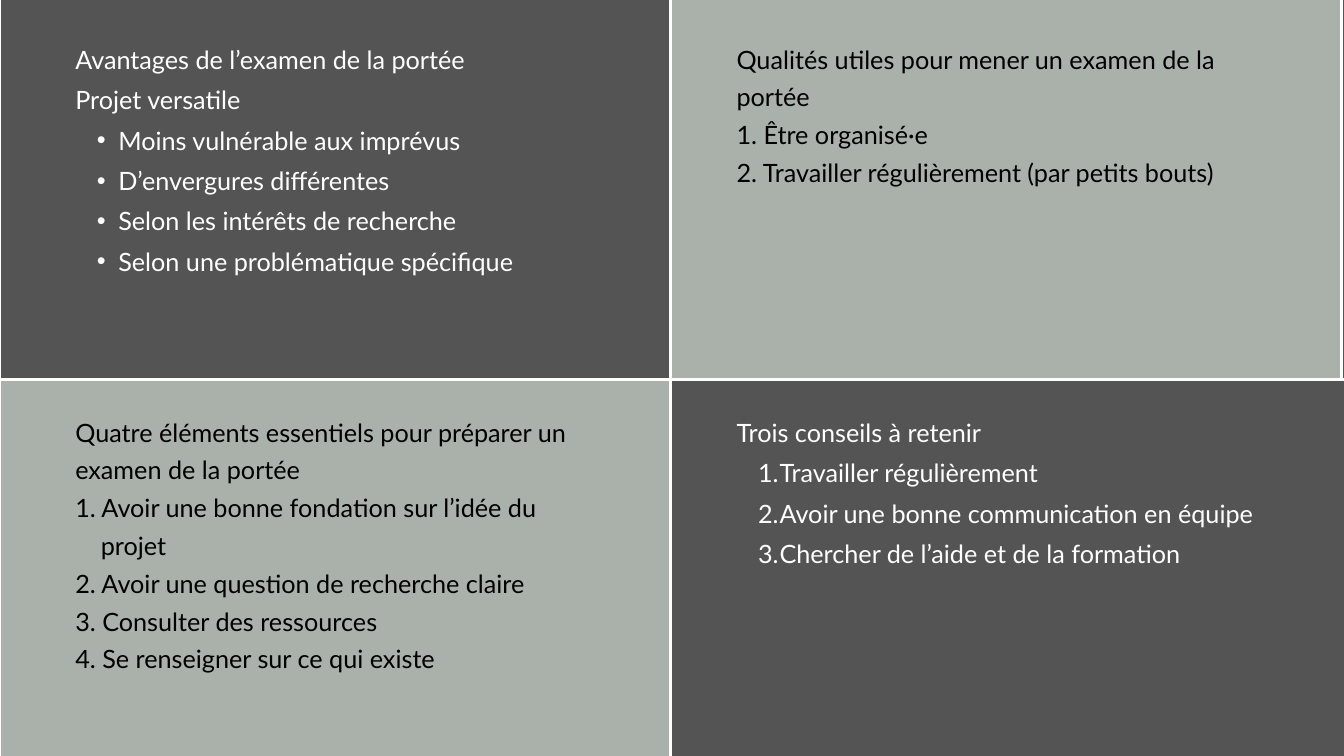
from lxml import etree
from pptx import Presentation
from pptx.dml.color import RGBColor
from pptx.enum.shapes import MSO_CONNECTOR, MSO_SHAPE
from pptx.enum.text import MSO_ANCHOR, MSO_AUTO_SIZE, PP_ALIGN
from pptx.oxml.ns import qn
from pptx.util import Inches, Pt

STRAIGHT = MSO_CONNECTOR.STRAIGHT
RECTANGLE = MSO_SHAPE.RECTANGLE
TOP = MSO_ANCHOR.TOP
NO_FIT = MSO_AUTO_SIZE.NONE
LEFT = PP_ALIGN.LEFT

WIDTH, HEIGHT = 20, 11.25
COL, ROW, BLEED = 9.98, 5.75, 0.1
DARK, LIGHT, WHITE, BLACK = "545454", "AAB1AB", "FFFFFF", "000000"
FONT, SIZE, RULE = "Lato", 27, 3

# Paragraph kind: (level, left margin, first-line indent, bullet tag, attributes)
KINDS = {
    "plain": (0, 0, 0, "a:buNone", {}),
    "hang": (0, 0.38, 0, "a:buNone", {}),
    "bullet": (1, 0.64, -0.32, "a:buChar", {"char": "•"}),
    "number": (1, 0.64, -0.32, "a:buAutoNum", {"type": "arabicPeriod"}),
}

# Quadrant: (column, row, text box offset and size, paragraphs)
QUADRANTS = [
    (0, 0, (1.12, 0.61, 8.02, 4.13), [
        ("plain", "Avantages de l’examen de la portée"),
        ("plain", "Projet versatile"),
        ("bullet", "Moins vulnérable aux imprévus"),
        ("bullet", "D’envergures différentes"),
        ("bullet", "Selon les intérêts de recherche"),
        ("bullet", "Selon une problématique spécifique"),
    ]),
    (1, 0, (0.98, 0.64, 8.28, 2.23), [
        ("plain", "Qualités utiles pour mener un examen de la portée"),
        ("plain", "1. Être organisé·e"),
        ("plain", "2. Travailler régulièrement (par petits bouts)"),
    ]),
    (0, 1, (1.12, 0.44, 8.34, 3.92), [
        ("plain", "Quatre éléments essentiels pour préparer un examen de la portée"),
        ("plain", "1. Avoir une bonne fondation sur l’idée du"),
        ("hang", "projet"),
        ("plain", "2. Avoir une question de recherche claire"),
        ("plain", "3. Consulter des ressources"),
        ("plain", "4. Se renseigner sur ce qui existe"),
    ]),
    (1, 1, (0.98, 0.41, 8.02, 2.94), [
        ("plain", "Trois conseils à retenir"),
        ("number", "Travailler régulièrement"),
        ("number", "Avoir une bonne communication en équipe"),
        ("number", "Chercher de l’aide et de la formation"),
    ]),
]


def paint(color_format, color):
    color_format.rgb = RGBColor.from_string(color)


def add_divider(slide, x1, y1, x2, y2):
    line = slide.shapes.add_connector(
        STRAIGHT, Inches(x1), Inches(y1), Inches(x2), Inches(y2))
    paint(line.line.color, WHITE)
    line.line.width = Pt(RULE)
    etree.SubElement(line._element.spPr, qn("a:effectLst"))


def add_panel(slide, left, top, color):
    sp = slide.shapes.add_shape(
        RECTANGLE, Inches(left), Inches(top), Inches(COL), Inches(ROW))
    sp.shadow.inherit = False
    sp.fill.solid()
    paint(sp.fill.fore_color, color)
    paint(sp.line.color, WHITE)
    sp.line.width = Pt(RULE)


def add_paragraph(p, kind, text, color, spacing):
    level, margin, indent, tag, attributes = KINDS[kind]
    p.level = level
    p.alignment = LEFT
    p.line_spacing = Pt(spacing)
    p.space_before = p.space_after = Pt(0)
    pPr = p._p.get_or_add_pPr()
    pPr.set("marL", str(Inches(margin)))
    pPr.set("indent", str(Inches(indent)))
    if kind == "bullet":
        etree.SubElement(pPr, qn("a:buFont"), typeface="Arial")
    etree.SubElement(pPr, qn(tag), attributes)
    r = p.add_run()
    r.text = text
    r.font.name = FONT
    r.font.size = Pt(SIZE)
    r.font.bold = False
    paint(r.font.color, color)


def fill_body(body, box, paragraphs, color, spacing):
    body.left, body.top, body.width, body.height = map(Inches, box)
    tf = body.text_frame
    tf.word_wrap = True
    tf.auto_size = NO_FIT
    tf.vertical_anchor = TOP
    tf.margin_left = tf.margin_top = tf.margin_right = tf.margin_bottom = 0
    for i, (kind, text) in enumerate(paragraphs):
        p = tf.add_paragraph() if i else tf.paragraphs[0]
        add_paragraph(p, kind, text, color, spacing)


def add_quadrant(slide, body, left, top, text_box, paragraphs, dark, panel):
    if panel:
        add_panel(slide, left, top, DARK if dark else LIGHT)
    dx, dy, width, height = text_box
    slide.shapes._spTree.append(body._element)  # text goes above its panel
    fill_body(body, (left + dx, top + dy, width, height), paragraphs,
              WHITE if dark else BLACK, 43.2 if dark else 40.5)


def main():
    prs = Presentation()
    prs.slide_width, prs.slide_height = Inches(WIDTH), Inches(HEIGHT)
    slide = prs.slides.add_slide(prs.slide_layouts.get_by_name("Comparison"))
    slide.background.fill.solid()
    paint(slide.background.fill.fore_color, DARK)

    title, *bodies = list(slide.placeholders)
    title._element.getparent().remove(title._element)

    middle = ROW - BLEED
    add_divider(slide, 0, middle, WIDTH, middle)
    add_divider(slide, COL, 0, COL, HEIGHT)
    for body, (col, row, text_box, paragraphs) in zip(bodies, QUADRANTS):
        # The last quadrant shows the dark background itself.
        add_quadrant(slide, body, col * COL, row * ROW - BLEED, text_box,
                     paragraphs, dark=col == row, panel=not (col and row))
    prs.save("out.pptx")


if __name__ == "__main__":
    main()
